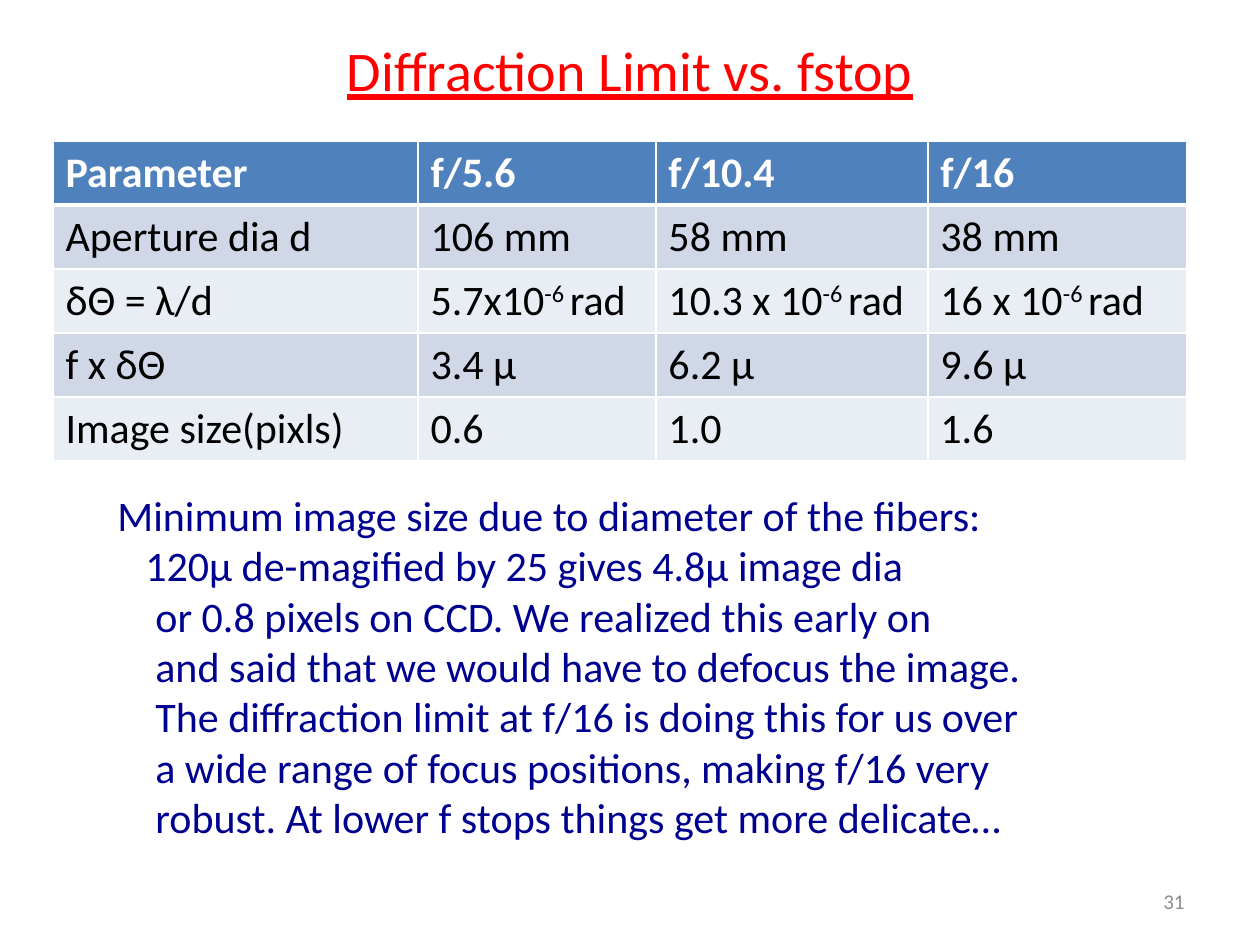
from dataclasses import dataclass

from lxml.etree import SubElement
from pptx import Presentation
from pptx.dml.color import RGBColor
from pptx.enum.text import MSO_ANCHOR, PP_ALIGN
from pptx.oxml.ns import qn
from pptx.util import Emu, Pt

EMU_PER_PX = 914400 / 126
FONT = "Calibri"
WHITE, BLACK, RED, NAVY, GREY = "FFFFFF", "000000", "FF0000", "000090", "8C8C8C"
HEADER_FILL, BAND_FILLS = "4F81BD", ("D0D8E8", "E9EDF4")
COLUMN_WIDTHS = (365, 238, 272, 259)
ROW_HEIGHT = 64
PARAMETERS = (
    ("Parameter", "f/5.6", "f/10.4", "f/16"),
    ("Aperture dia d", "106 mm", "58 mm", "38 mm"),
    ("δΘ = λ/d", "5.7x10^-6 ^rad", "10.3 x 10^-6 ^rad", "16 x 10^-6 ^rad"),
    ("f x δΘ", "3.4 μ", "6.2 μ", "9.6 μ"),
    ("Image size(pixls)", "0.6", "1.0", "1.6"),
)


@dataclass(frozen=True)
class Box:
    left: int
    top: int
    width: int
    height: int

    def emu(self):
        return [px(side) for side in (self.left, self.top, self.width, self.height)]


@dataclass(frozen=True)
class Line:
    text: str
    indent: int = 0
    align: PP_ALIGN = PP_ALIGN.LEFT


FIBER_NOTE = (
    Line("Minimum image size due to diameter of the fibers:"),
    Line("120μ de-magified by 25 gives 4.8μ image dia", 28),
    *(Line(text, 38) for text in (
        "or 0.8 pixels on CCD. We realized this early on",
        "and said that we would have to defocus the image.",
        "The diffraction limit at f/16 is doing this for us over",
        "a wide range of focus positions, making f/16 very",
        "robust. At lower f stops things get more delicate…",
    )),
)


def px(length: int) -> Emu:
    return Emu(round(length * EMU_PER_PX))


def rgb(color: str) -> RGBColor:
    return RGBColor.from_string(color)


def style(paragraph, size: int, color: str, bold: bool = False) -> None:
    font = paragraph.font
    font.name, font.size, font.bold = FONT, Pt(size), bold
    font.color.rgb = rgb(color)


def set_title(slide, box: Box, text: str) -> None:
    title = slide.shapes.title
    title.left, title.top, title.width, title.height = box.emu()
    title.text_frame.text = text
    title.text_frame.vertical_anchor = MSO_ANCHOR.MIDDLE
    heading = title.text_frame.paragraphs[0]
    heading.alignment = PP_ALIGN.CENTER
    style(heading, 32, RED)
    heading.font.underline = True


def add_text(slide, box: Box, lines, size: int, color: str,
             anchor: MSO_ANCHOR = MSO_ANCHOR.TOP, wrap: bool = False) -> None:
    frame = slide.shapes.add_textbox(*box.emu()).text_frame
    frame.word_wrap, frame.vertical_anchor = wrap, anchor
    for index, line in enumerate(lines):
        paragraph = frame.add_paragraph() if index else frame.paragraphs[0]
        paragraph.text, paragraph.alignment = line.text, line.align
        if line.indent:
            paragraph._p.get_or_add_pPr().set("marL", str(px(line.indent)))
        style(paragraph, size, color)


def add_border(cell, side: str, width: int) -> None:
    border = SubElement(cell._tc.get_or_add_tcPr(), qn(f"a:ln{side}"), w=str(Pt(width)))
    fill = SubElement(border, qn("a:solidFill"))
    SubElement(fill, qn("a:srgbClr"), val=WHITE)


def fill_cell(cell, text: str, row: int) -> None:
    """Write a cell, raising the parts of its text that stand between carets."""
    header = row == 0
    paragraph = cell.text_frame.paragraphs[0]
    for index, part in enumerate(text.split("^")):
        run = paragraph.add_run()
        run.text = part
        if index % 2:
            run._r.get_or_add_rPr().set("baseline", "30000")
    style(paragraph, 24, WHITE if header else BLACK, header)
    for side in "LRTB":
        thick = (header and side == "B") or (row == 1 and side == "T")
        add_border(cell, side, 3 if thick else 1)
    cell.fill.solid()
    cell.fill.fore_color.rgb = rgb(HEADER_FILL if header else BAND_FILLS[(row - 1) % 2])


def add_parameter_table(slide, left: int, top: int) -> None:
    box = Box(left, top, sum(COLUMN_WIDTHS), ROW_HEIGHT * len(PARAMETERS))
    table = slide.shapes.add_table(len(PARAMETERS), len(COLUMN_WIDTHS), *box.emu()).table
    for column, width in zip(table.columns, COLUMN_WIDTHS):
        column.width = px(width)
    for row, texts in enumerate(PARAMETERS):
        table.rows[row].height = px(ROW_HEIGHT)
        for column, text in enumerate(texts):
            fill_cell(table.cell(row, column), text, row)


def main() -> None:
    deck = Presentation()
    deck.slide_width, deck.slide_height = px(1260), px(945)
    slide = deck.slides.add_slide(deck.slide_layouts[5])
    set_title(slide, Box(63, -10, 1134, 158), "Diffraction Limit vs. fstop")
    add_parameter_table(slide, 53, 141)
    add_text(slide, Box(903, 876, 294, 50), [Line("31", align=PP_ALIGN.RIGHT)], 12, GREY,
             MSO_ANCHOR.MIDDLE, True)
    add_text(slide, Box(105, 483, 941, 420), FIBER_NOTE, 24, NAVY)
    deck.save("out.pptx")


if __name__ == "__main__":
    main()
